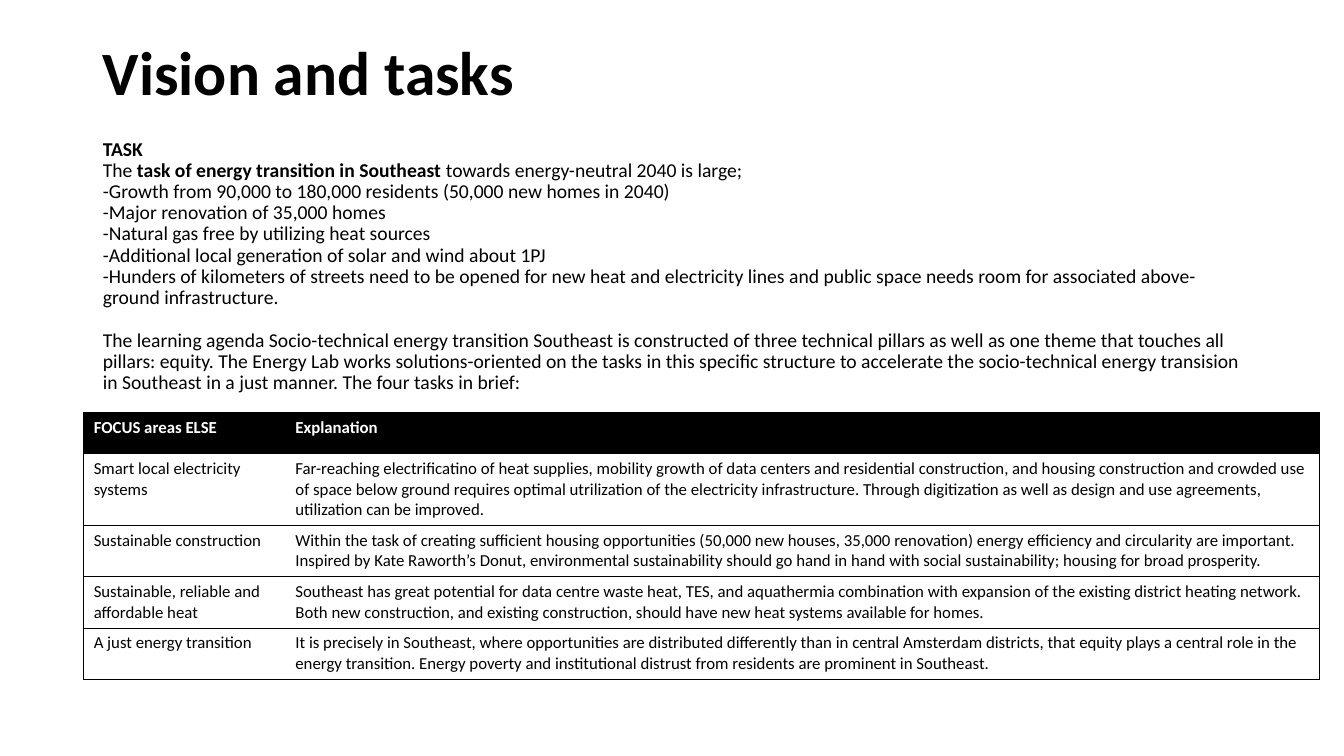
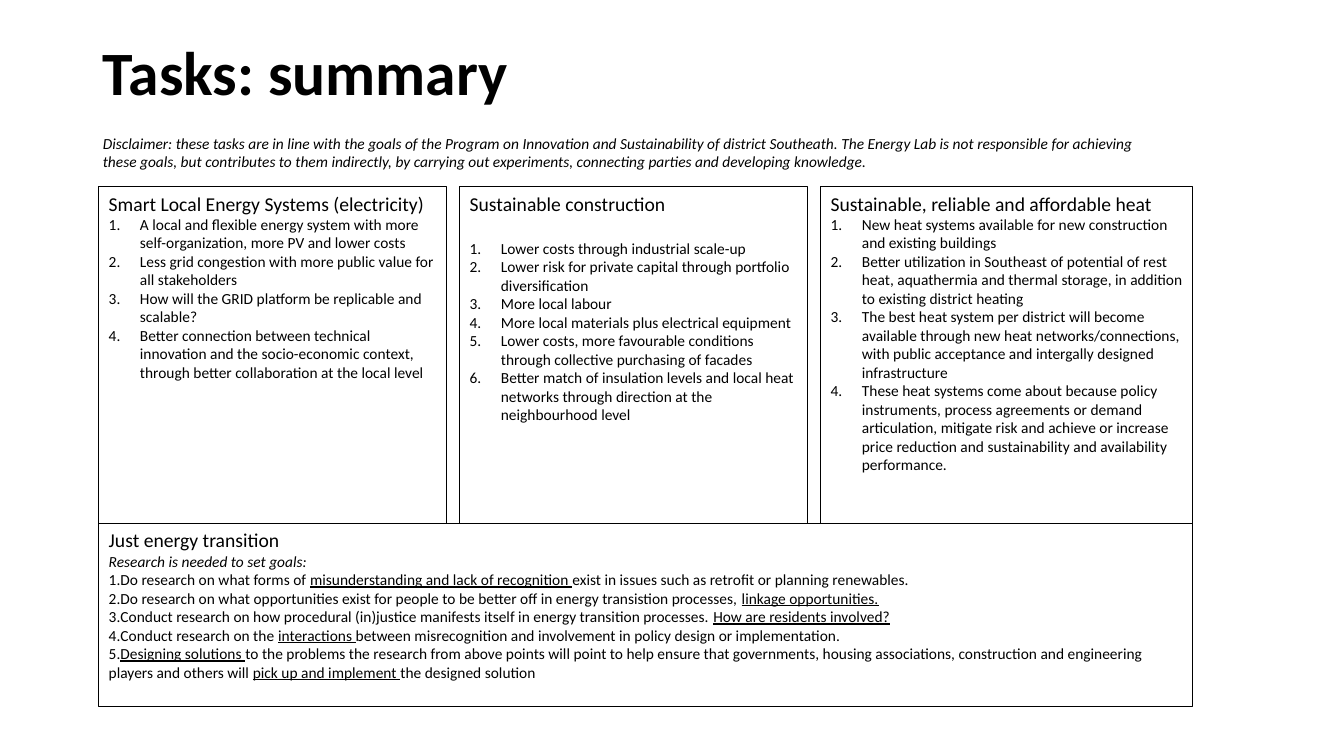
import pptx
import pptx.util
import pptx.dml.color
import pptx.enum.text
from lxml import etree
from pptx.util import Inches, Pt

# Shared look
FONT, BLACK, WHITE = "Calibri", "000000", "FFFFFF"
SLIDE_WIDTH, SLIDE_HEIGHT = 13.33, 7.5
TITLE_BOX = (0.92, 0.3, 11.5, 0.9)
NUMBER_INDENT = 0.31

# Content: text between bars is emphasised
TASK_HEADING = "|TASK|"
TASK_LINES = [
    "The |task of energy transition in Southeast |towards energy-neutral 2040 is large;",
    "-Growth from 90,000 to 180,000 residents (50,000 new homes in 2040)",
    "-Major renovation of 35,000 homes",
    "-Natural gas free by utilizing heat sources",
    "-Additional local generation of solar and wind about 1PJ",
    "-Hunders of kilometers of streets need to be opened for new heat and electricity lines and "
    "public space needs room for associated above-ground infrastructure.",
]
AGENDA = (
    "The learning agenda Socio-technical energy transition Southeast is constructed of three "
    "technical pillars as well as one theme that touches all pillars: equity. The Energy Lab works "
    "solutions-oriented on the tasks in this specific structure to accelerate the socio-technical "
    "energy transision in Southeast in a just manner. The four tasks in brief:"
)
FOCUS_AREAS = [
    ("FOCUS areas ELSE", "Explanation"),
    ("Smart local electricity systems",
     "Far-reaching electrificatino of heat supplies, mobility growth of data centers and residential "
     "construction, and housing construction and crowded use of space below ground requires optimal "
     "utrilization of the electricity infrastructure. Through digitization as well as design and use "
     "agreements, utilization can be improved."),
    ("Sustainable construction",
     "Within the task of creating sufficient housing opportunities (50,000 new houses, 35,000 "
     "renovation) energy efficiency and circularity are important. Inspired by Kate Raworth’s Donut, "
     "environmental sustainability should go hand in hand with social sustainability; housing for "
     "broad prosperity."),
    ("Sustainable, reliable and affordable heat",
     "Southeast has great potential for data centre waste heat, TES, and aquathermia combination with "
     "expansion of the existing district heating network. Both new construction, and existing "
     "construction, should have new heat systems available for homes."),
    ("A just energy transition",
     "It is precisely in Southeast, where opportunities are distributed differently than in central "
     "Amsterdam districts, that equity plays a central role in the energy transition. Energy poverty "
     "and institutional distrust from residents are prominent in Southeast."),
]
COLUMN_WIDTHS = [2, 10.26]
ROW_HEIGHTS = [0.41, 0.71, 0.51, 0.51, 0.51]

DISCLAIMER = (
    "Disclaimer: these tasks are in line with the goals of the Program on Innovation and "
    "Sustainability of district Southeath. The Energy Lab is not responsible for achieving these "
    "goals, but contributes to them indirectly, by carrying out experiments, connecting parties and "
    "developing knowledge."
)
# Heading, box width, space after heading in points, tasks
TASK_COLUMNS = [
    ("Smart Local Energy Systems (electricity)", 3.45, 0, [
        "A local and flexible energy system with more self-organization, more PV and lower costs",
        "Less grid congestion with more public value for all stakeholders",
        "How will the GRID platform be replicable and scalable?",
        "Better connection between technical innovation and the socio-economic context, through "
        "better collaboration at the local level",
    ]),
    ("Sustainable construction", 3.45, 17, [
        "Lower costs through industrial scale-up",
        "Lower risk for private capital through portfolio diversification",
        "More local labour",
        "More local materials plus electrical equipment",
        "Lower costs, more favourable conditions through collective purchasing of facades",
        "Better match of insulation levels and local heat networks through direction at the "
        "neighbourhood level",
    ]),
    ("Sustainable, reliable and affordable heat", 3.69, 0, [
        "New heat systems available for new construction and existing buildings",
        "Better utilization in Southeast of potential of rest heat, aquathermia and thermal storage, "
        "in addition to existing district heating",
        "The best heat system per district will become available through new heat "
        "networks/connections, with public acceptance and intergally designed infrastructure",
        "These heat systems come about because policy instruments, process agreements or demand "
        "articulation, mitigate risk and achieve or increase price reduction and sustainability and "
        "availability performance.",
    ]),
]
JUST_HEADING = "Just energy transition"
JUST_INTRO = "Research is needed to set goals:"
JUST_TASKS = [
    "Do research on what forms of |misunderstanding and lack of recognition |exist in issues such as "
    "retrofit or planning renewables.",
    "Do research on what opportunities exist for people to be better off in energy transistion "
    "processes, |linkage opportunities.|",
    "Conduct research on how procedural (in)justice manifests itself in energy transition processes. "
    "|How are residents involved?|",
    "Conduct research on the |interactions |between misrecognition and involvement in policy design "
    "or implementation.",
    "|Designing solutions |to the problems the research from above points will point to help ensure "
    "that governments, housing associations, construction and engineering players and others will "
    "|pick up and implement |the designed solution",
]


# Helpers
def color(hex_value):
    return pptx.dml.color.RGBColor.from_string(hex_value)


def place(shape, box):
    shape.left, shape.top, shape.width, shape.height = map(Inches, box)


def write(paragraph, text, size, ink=BLACK, bold=False, italic=False, emphasis="bold",
          spacing=1.0, before=0, after=0, numbered=False, indent=0):
    """Fill one paragraph; parts between bars get the emphasis."""
    for position, part in enumerate(text.split("|")):
        if part:
            run = paragraph.add_run()
            run.text = part
            if position % 2:
                setattr(run.font, emphasis, True)
    paragraph.line_spacing = spacing
    paragraph.space_before, paragraph.space_after = Pt(before), Pt(after)
    paragraph.alignment = pptx.enum.text.PP_ALIGN.LEFT
    properties = paragraph._p.get_or_add_pPr()
    properties.set("marL", str(Inches(indent)))
    properties.set("indent", str(-Inches(indent)))
    bullet = etree.SubElement(
        properties, pptx.oxml.ns.qn("a:buAutoNum" if numbered else "a:buNone"))
    if numbered:
        bullet.set("type", "arabicPeriod")
    font = paragraph.font
    font.name, font.size, font.bold, font.italic = FONT, Pt(size), bold, italic
    font.color.rgb = color(ink)


def fill_frame(frame, entries):
    """Write (text, options) entries as successive paragraphs."""
    frame.word_wrap = True
    frame.auto_size = pptx.enum.text.MSO_AUTO_SIZE.NONE
    for position, (text, options) in enumerate(entries):
        paragraph = frame.add_paragraph() if position else frame.paragraphs[0]
        write(paragraph, text, **options)


def add_slide(presentation, title, body_box, entries):
    slide = presentation.slides.add_slide(presentation.slide_layouts[1])
    fill_frame(slide.shapes.title.text_frame, [(title, dict(size=44, bold=True, spacing=0.9))])
    body = slide.placeholders[1]
    place(body, body_box)
    fill_frame(body.text_frame, entries)
    return slide


def add_outlined_box(slide, box, entries):
    shape = slide.shapes.add_textbox(*map(Inches, box))
    shape.line.color.rgb = color(BLACK)
    shape.line.width = Pt(0.75)
    fill_frame(shape.text_frame, entries)


def set_borders(cell, drawn_sides):
    properties = cell._tc.get_or_add_tcPr()
    fills = list(properties)
    for side in "LRTB":
        line = etree.SubElement(properties, pptx.oxml.ns.qn("a:ln" + side), w=str(Pt(0.5)))
        if side in drawn_sides:
            solid = etree.SubElement(line, pptx.oxml.ns.qn("a:solidFill"))
            etree.SubElement(solid, pptx.oxml.ns.qn("a:srgbClr"), val=BLACK)
        else:
            etree.SubElement(line, pptx.oxml.ns.qn("a:noFill"))
    properties.extend(fills)  # the fill belongs after the borders


def add_focus_table(slide, left, top):
    box = (left, top, sum(COLUMN_WIDTHS), sum(ROW_HEIGHTS))
    table = slide.shapes.add_table(
        len(FOCUS_AREAS), len(COLUMN_WIDTHS), *map(Inches, box)).table
    for column, width in zip(table.columns, COLUMN_WIDTHS):
        column.width = Inches(width)
    for row_number, (row, height) in enumerate(zip(table.rows, ROW_HEIGHTS)):
        row.height = Inches(height)
        header = row_number == 0
        for cell, text, outer_side in zip(row.cells, FOCUS_AREAS[row_number], "LR"):
            cell.fill.solid()
            cell.fill.fore_color.rgb = color(BLACK if header else WHITE)
            write(cell.text_frame.paragraphs[0], text, 12,
                  ink=WHITE if header else BLACK, bold=header)
            set_borders(cell, outer_side + "TB")


# Slides
def build_vision(presentation):
    style = dict(size=14, spacing=0.9)
    entries = [(text, style) for text in [TASK_HEADING] + TASK_LINES]
    entries.append((AGENDA, dict(style, before=15.4)))
    slide = add_slide(presentation, "Vision and tasks", (0.92, 1.33, 11.5, 2.7), entries)
    add_focus_table(slide, 0.83, 4.09)


def build_summary(presentation):
    slide = add_slide(presentation, "Tasks: summary", (0.92, 1.28, 10.49, 0.57),
                      [(DISCLAIMER, dict(size=11, italic=True))])
    left, top, gap, split, bottom = 0.98, 1.85, 0.13, 5.19, 7.01
    column_left = left
    for heading, width, after, tasks in TASK_COLUMNS:
        entries = [(heading, dict(size=14, after=after))]
        entries += [(task, dict(size=11, numbered=True, indent=NUMBER_INDENT)) for task in tasks]
        add_outlined_box(slide, (column_left, top, width, split - top), entries)
        column_left += width + gap
    entries = [(JUST_HEADING, dict(size=14)), (JUST_INTRO, dict(size=11, italic=True))]
    entries += [(task, dict(size=11, numbered=True, emphasis="underline")) for task in JUST_TASKS]
    add_outlined_box(slide, (left, split, column_left - gap - left, bottom - split), entries)


def main():
    presentation = pptx.Presentation()
    presentation.slide_width = Inches(SLIDE_WIDTH)
    presentation.slide_height = Inches(SLIDE_HEIGHT)
    place(presentation.slide_layouts[1].placeholders[0], TITLE_BOX)
    build_vision(presentation)
    build_summary(presentation)
    presentation.save("out.pptx")


if __name__ == "__main__":
    main()
